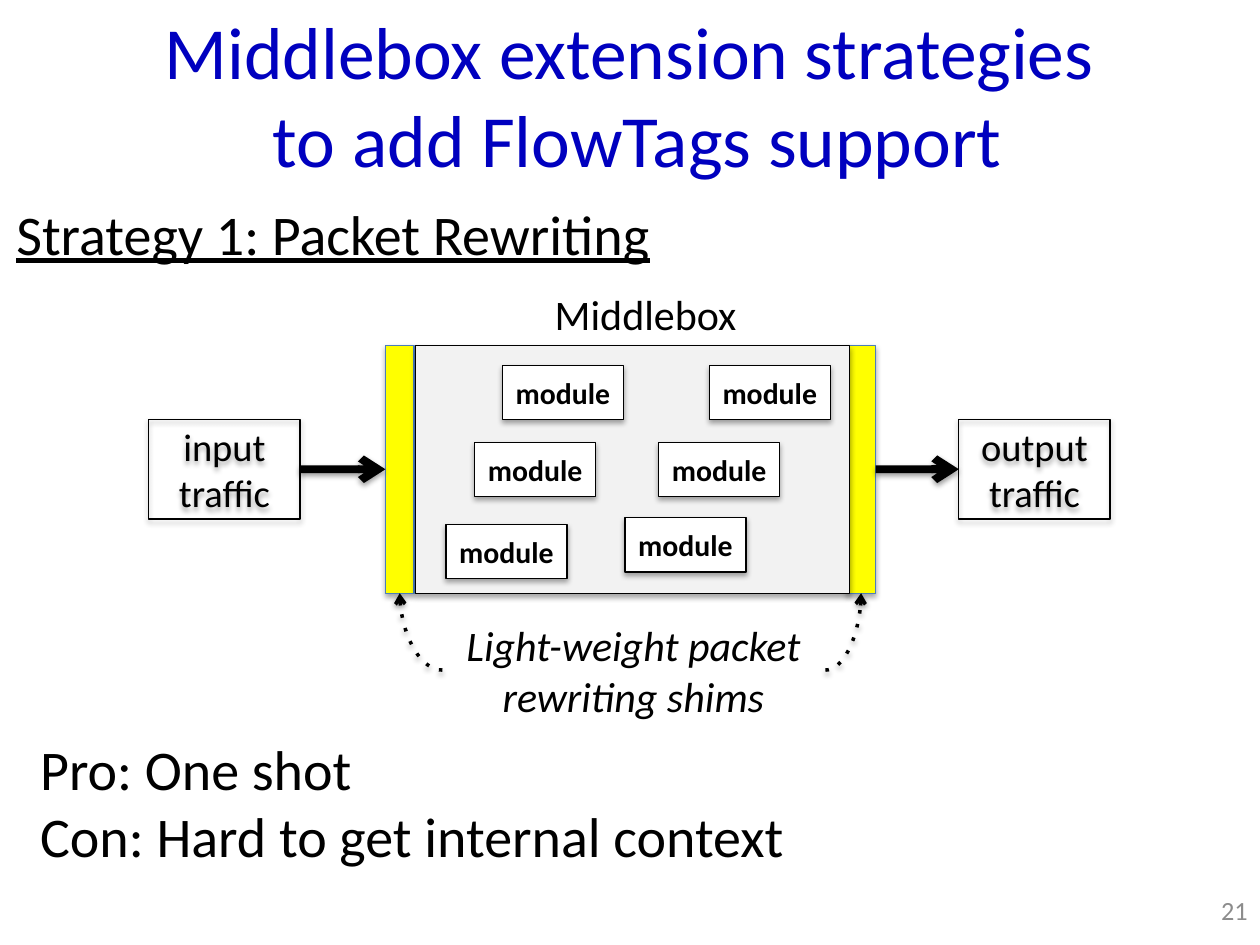
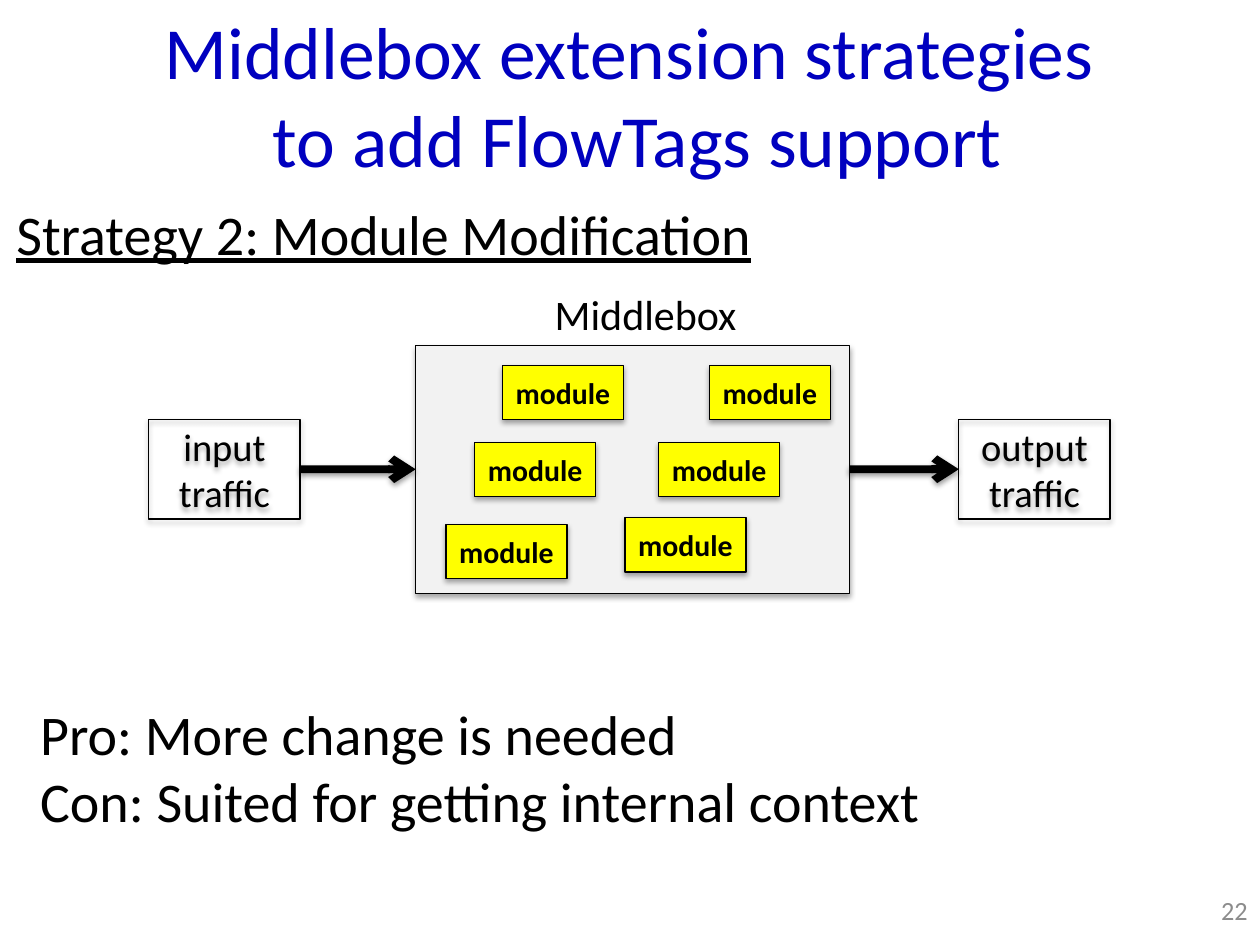
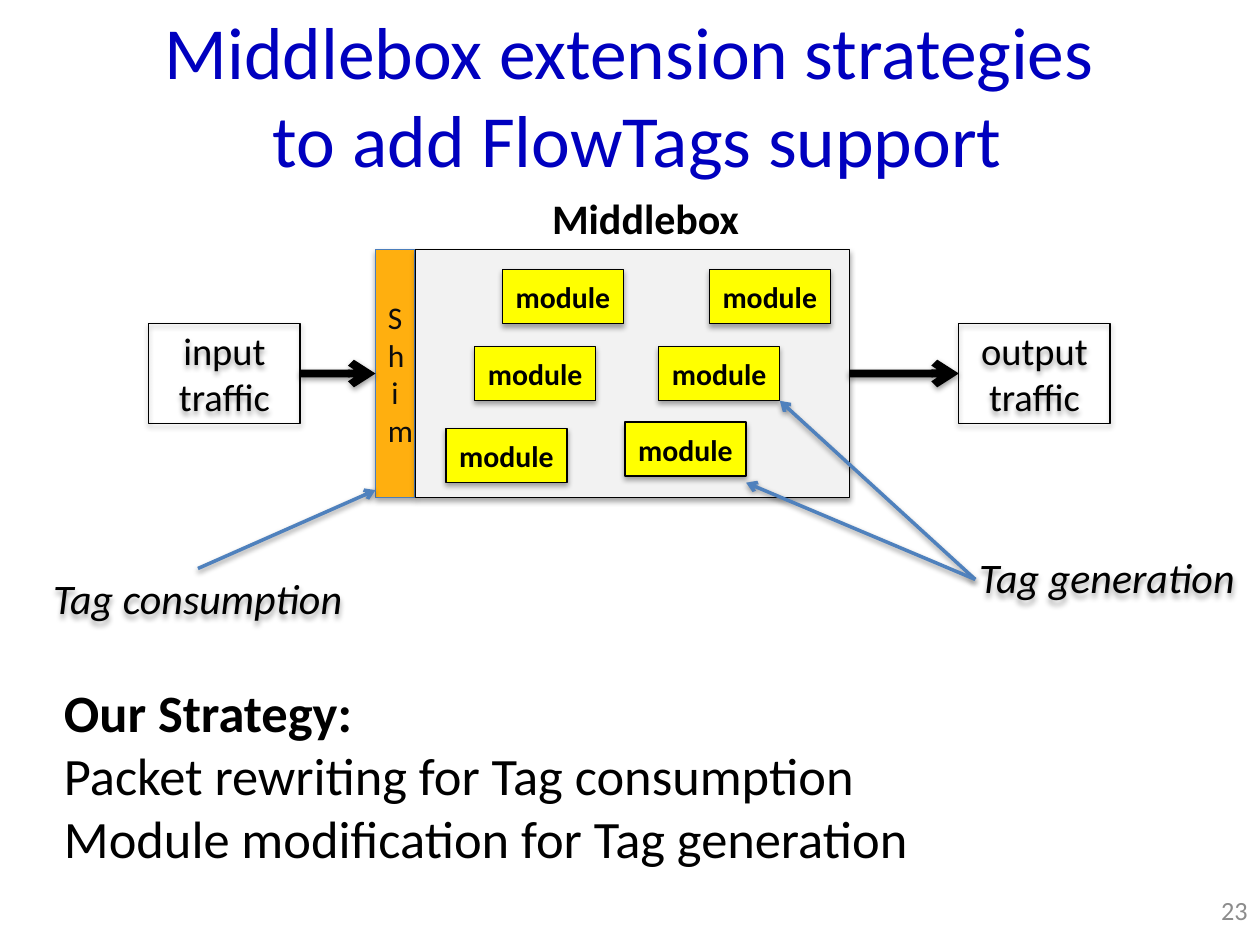
from lxml import etree
from pptx import Presentation
from pptx.dml.color import RGBColor
from pptx.enum import shapes, text
from pptx.oxml.ns import qn
from pptx.util import Cm, Pt

BLACK = RGBColor(0x00, 0x00, 0x00)
INK = RGBColor(0x0D, 0x0D, 0x0D)
WHITE = RGBColor(0xFF, 0xFF, 0xFF)
GREY = RGBColor(0x8C, 0x8C, 0x8C)
PALE = RGBColor(0xF2, 0xF2, 0xF2)
TITLE = RGBColor(0x00, 0x00, 0xBF)
YELLOW = RGBColor(0xFF, 0xFF, 0x00)
ORANGE = RGBColor(0xFF, 0xAF, 0x0F)
EDGE = RGBColor(0x4B, 0x7E, 0xBC)
BLUE = RGBColor(0x4F, 0x81, 0xBD)
FONT = "Calibri"

LEFT, CENTER, RIGHT = text.PP_ALIGN.LEFT, text.PP_ALIGN.CENTER, text.PP_ALIGN.RIGHT
TOP, MIDDLE = text.MSO_ANCHOR.TOP, text.MSO_ANCHOR.MIDDLE

# Middlebox and its surroundings, in cm
BOX_X, BOX_W, BOX_H = 8.38, 8.74, 5.0
MOD_W, MOD_H = 2.44, 1.09
MODULES = [(0.61, 3.61), (1.19, 1.96), (4.9, 1.96),
           (1.75, 0.41), (5.92, 0.41), (4.22, 3.48)]
END_W, END_H = 3.05, 2.01


def add_shadow(item, alpha=35, dist=23000):
    props = item._element.spPr
    for old in props.findall(qn("a:effectLst")):
        props.remove(old)
    effects = etree.SubElement(props, qn("a:effectLst"))
    drop = etree.SubElement(effects, qn("a:outerShdw"), blurRad="40000",
                            dist=str(dist), dir="5400000", rotWithShape="0")
    color = etree.SubElement(drop, qn("a:srgbClr"), val=str(BLACK))
    etree.SubElement(color, qn("a:alpha"), val=str(alpha * 1000))


def write(shape, lines, size, color=BLACK, align=CENTER, anchor=MIDDLE,
          bold=False, italic=False, under=False):
    frame = shape.text_frame
    frame.word_wrap = True
    frame.vertical_anchor = anchor
    frame.text = "\n".join(lines)
    for par in frame.paragraphs:
        par.alignment = align
        font = par.font
        font.name, font.size, font.color.rgb = FONT, Pt(size), color
        font.bold, font.italic, font.underline = bold, italic, under
    return shape


def add_text(slide, box, lines, size, **style):
    area = slide.shapes.add_textbox(*map(Cm, box))
    return write(area, lines, size, **style)


def add_rect(slide, box, fill=None, line=BLACK):
    rect = slide.shapes.add_shape(shapes.MSO_SHAPE.RECTANGLE, *map(Cm, box))
    if fill is None:
        rect.fill.background()
    else:
        rect.fill.solid()
        rect.fill.fore_color.rgb = fill
    rect.line.color.rgb = line
    rect.line.width = Pt(0.75)
    add_shadow(rect)
    return rect


def add_arrow(slide, start=(0, 0), end=(0, 0), color=BLACK, width=4.5, curved=False):
    kind = shapes.MSO_CONNECTOR.CURVE if curved else shapes.MSO_CONNECTOR.STRAIGHT
    arrow = slide.shapes.add_connector(kind, *map(Cm, (*start, *end)))
    arrow.line.color.rgb = color
    arrow.line.width = Pt(width)
    stroke = arrow.line._get_or_add_ln()
    if curved:
        # One quarter bend, drawn as dots
        arrow._element.spPr.find(qn("a:prstGeom")).set("prst", "curvedConnector2")
        etree.SubElement(stroke, qn("a:prstDash"), val="dot")
    etree.SubElement(stroke, qn("a:tailEnd"), type="arrow")
    add_shadow(arrow, alpha=38, dist=20000)
    return arrow


def join(slide, source, target):
    arrow = add_arrow(slide)
    arrow.begin_connect(source, 3)
    arrow.end_connect(target, 1)


def add_base(deck, number):
    """Slide with the shared title and page number."""
    slide = deck.slides.add_slide(deck.slide_layouts[6])
    add_text(slide, (1.42, 0.1, 22.86, 3.6),
             ["Middlebox extension strategies \vto add FlowTags support"],
             42, color=TITLE)
    add_text(slide, (24.13, 17.65, 1.27, 1.4), [str(number)], 15,
             color=GREY, align=RIGHT)
    return slide


def add_head(slide, words):
    add_text(slide, (0.08, 3.89, 16.7, 1.63), [words], 32,
             align=LEFT, anchor=TOP, under=True)


def add_notes(slide, box, lines, size=32):
    return add_text(slide, box, lines, size, align=LEFT, anchor=TOP)


def add_shim(slide, top, dx, width, fill=YELLOW):
    return add_rect(slide, (BOX_X + dx, top, width, BOX_H), fill, EDGE)


def add_flow(slide, top, fill, entry=None, leave=None, bold=False):
    """Middlebox with modules, between input and output traffic."""
    add_text(slide, (BOX_X, top - 1.27, 9.27, 1.27), ["Middlebox"], 24,
             anchor=TOP, bold=bold)
    box = add_rect(slide, (BOX_X, top, BOX_W, BOX_H), PALE)
    for dx, dy in MODULES:
        part = add_rect(slide, (BOX_X + dx, top + dy, MOD_W, MOD_H), fill)
        write(part, ["module"], 17, bold=True)

    # Traffic ends, level with the middle of the box
    mid = top + (BOX_H - END_H) / 2
    source = add_rect(slide, (BOX_X - 5.38, mid, END_W, END_H))
    write(source, ["input traffic"], 22)
    sink = add_rect(slide, (BOX_X + 10.95, mid, END_W, END_H))
    write(sink, ["output", "traffic"], 22)
    join(slide, source, entry or box)
    join(slide, leave or box, sink)


def rewriting(deck):
    slide = add_base(deck, 21)
    add_head(slide, "Strategy 1: Packet Rewriting")
    top = 6.96
    shims = [add_shim(slide, top, dx, 0.58) for dx in (-0.61, 8.69)]
    add_flow(slide, top, WHITE, *shims)

    # Caption with a dotted arrow to each shim
    add_text(slide, (BOX_X + 0.54, top + 5.41, 7.7, 2.31),
             ["Light-weight packet", "rewriting shims"], 24,
             anchor=TOP, italic=True)
    for shim, dx in zip(shims, (0.54, 8.26)):
        start = (BOX_X + dx, top + 6.55)
        add_arrow(slide, start, start, width=2, curved=True).end_connect(shim, 2)
    add_notes(slide, (0.56, 14.68, 24.28, 3),
              ["Pro: One shot", "Con: Hard to get internal context"])


def changing(deck):
    slide = add_base(deck, 22)
    add_head(slide, "Strategy 2: Module Modification")
    add_flow(slide, 6.96, YELLOW)
    add_notes(slide, (0.56, 13.97, 24.28, 3),
              ["Pro: More change is needed",
               "Con: Suited for getting internal context"])


def combined(deck):
    slide = add_base(deck, 23)
    top = 5.03
    shim = add_shim(slide, top, -0.81, 0.79, ORANGE)
    write(shim, ["Shim"], 18, color=INK)
    add_flow(slide, top, YELLOW, entry=shim, bold=True)

    # Tag labels and their pointers
    for box, words in (((19.33, 11, 5.97, 1.27), "Tag generation"),
                       ((0.2, 11.46, 7.57, 1.19), "Tag consumption")):
        add_shadow(add_text(slide, box, [words], 24, italic=True))
    fork = (19.66, 11.68)
    for start, end in (((3.99, 11.46), (7.57, 9.88)),
                       (fork, (15.72, 8.08)), (fork, (15.04, 9.73))):
        add_arrow(slide, start, end, BLUE, 2)

    notes = add_notes(slide, (1.04, 13.59, 23.09, 4.11),
                      ["Our Strategy:", "Packet rewriting for Tag consumption",
                       "Module modification for Tag generation"], 30)
    notes.text_frame.paragraphs[0].font.bold = True


def main():
    deck = Presentation()
    deck.slide_width, deck.slide_height = Cm(25.4), Cm(19.05)
    for build in (rewriting, changing, combined):
        build(deck)
    deck.save("out.pptx")


if __name__ == "__main__":
    main()
